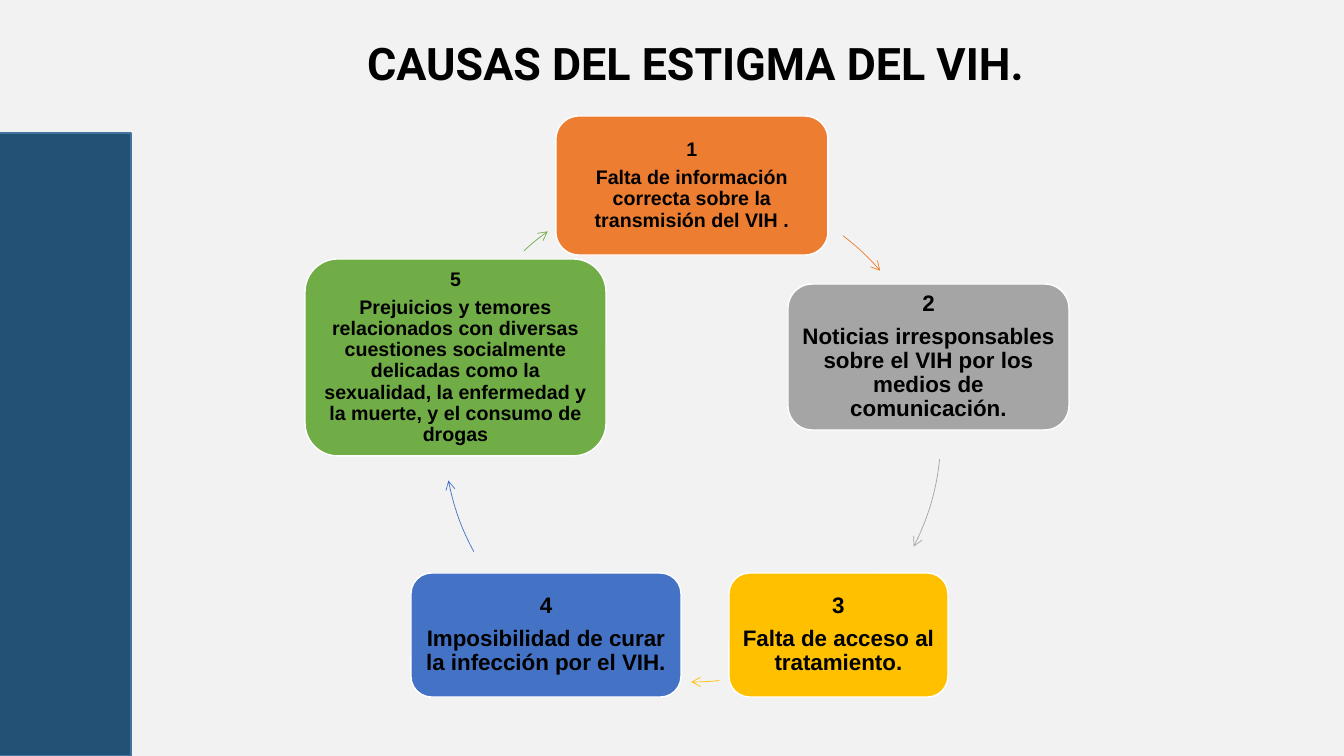
from lxml import etree
from pptx import Presentation
from pptx.dml.color import RGBColor
from pptx.enum.shapes import MSO_SHAPE
from pptx.enum.text import MSO_ANCHOR, MSO_AUTO_SIZE, PP_ALIGN
from pptx.oxml.ns import qn
from pptx.util import Emu, Pt

BLACK = RGBColor(0x00, 0x00, 0x00)
WHITE = RGBColor(0xFF, 0xFF, 0xFF)
PAPER = RGBColor(0xF2, 0xF2, 0xF2)
NAVY = RGBColor(0x23, 0x51, 0x75)
STEEL = RGBColor(0x43, 0x73, 0x9E)
ORANGE = RGBColor(0xED, 0x7D, 0x31)
GRAY = RGBColor(0xA5, 0xA5, 0xA5)
YELLOW = RGBColor(0xFF, 0xC0, 0x00)
BLUE = RGBColor(0x44, 0x72, 0xC4)
GREEN = RGBColor(0x70, 0xAD, 0x47)

# Box (left, top, width, height), colour, text size, arrow angles, wording.
# Angles run clockwise from the right, in degrees.
CAUSES = [
    ((556, 116, 272, 139), ORANGE, 14, (307.3, 319.1),
     "Falta de información correcta sobre la transmisión del VIH ."),
    ((788, 284, 281, 146), GRAY, 16, (5.9, 27.1),
     "Noticias irresponsables sobre el VIH por los medios de comunicación."),
    ((729, 573, 219, 124), YELLOW, 16, (83.8, 90.3),
     "Falta de acceso al tratamiento."),
    ((411, 573, 270, 124), BLUE, 16, (151.6, 169.1),
     "Imposibilidad de curar la infección por el VIH."),
    ((305, 259, 301, 197), GREEN, 14, (227.3, 234.4),
     "Prejuicios y temores relacionados con diversas cuestiones socialmente "
     "delicadas como la sexualidad, la enfermedad y la muerte, y el consumo de drogas"),
]
CYCLE = (444, 185, 497, 497)


def px(count):
    return Emu(round(count * 914400 / 100.8))


def add_shape(kind, place, fill, line, weight):
    """Add a shadowless shape; a fill of None leaves it open."""
    shape = page.shapes.add_shape(kind, *map(px, place))
    shape.shadow.inherit = False
    if fill is None:
        shape.fill.background()
    else:
        shape.fill.solid()
        shape.fill.fore_color.rgb = fill
    shape.line.color.rgb = line
    shape.line.width = Pt(weight)
    return shape


deck = Presentation()
deck.slide_width, deck.slide_height = px(1344), px(756)
page = deck.slides.add_slide(deck.slide_layouts[5])
page.background.fill.solid()
page.background.fill.fore_color.rgb = PAPER

title = page.shapes.title
title.left, title.top, title.width, title.height = map(px, (357, 30, 722, 65))
frame = title.text_frame
frame.text = "CAUSAS DEL ESTIGMA DEL VIH."
frame.word_wrap = False
frame.auto_size = MSO_AUTO_SIZE.NONE
heading = frame.paragraphs[0]
heading.alignment = PP_ALIGN.LEFT
heading.font.name = "Roboto"
heading.font.size = Pt(32)
heading.font.bold = True
heading.font.color.rgb = BLACK

for number, (place, color, size, angles, cause) in enumerate(CAUSES, 1):
    box = add_shape(MSO_SHAPE.ROUNDED_RECTANGLE, place, color, WHITE, 1)
    frame = box.text_frame
    frame.text = f"{number}\n{cause}"
    frame.word_wrap = True
    frame.vertical_anchor = MSO_ANCHOR.MIDDLE
    inset = px(6 if size == 14 else 7)
    frame.margin_left = frame.margin_right = inset
    frame.margin_top = frame.margin_bottom = inset
    for para in frame.paragraphs:
        para.alignment = PP_ALIGN.CENTER
        para.line_spacing = 0.9
        para.space_after = Pt(round(size * 0.35))
        para.font.name = "Arial"
        para.font.size = Pt(size)
        para.font.bold = True
        para.font.color.rgb = BLACK

    arrow = add_shape(MSO_SHAPE.ARC, CYCLE, None, color, 0.5)
    for index, angle in enumerate(angles):
        # Arc adjustments count 60000 per degree, scaled down by 100000.
        arrow.adjustments[index] = angle * 0.6
    etree.SubElement(arrow.line._get_or_add_ln(), qn("a:tailEnd"), type="arrow")

add_shape(MSO_SHAPE.RECTANGLE, (-3, 133, 134, 623), NAVY, STEEL, 1)

deck.save("out.pptx")
